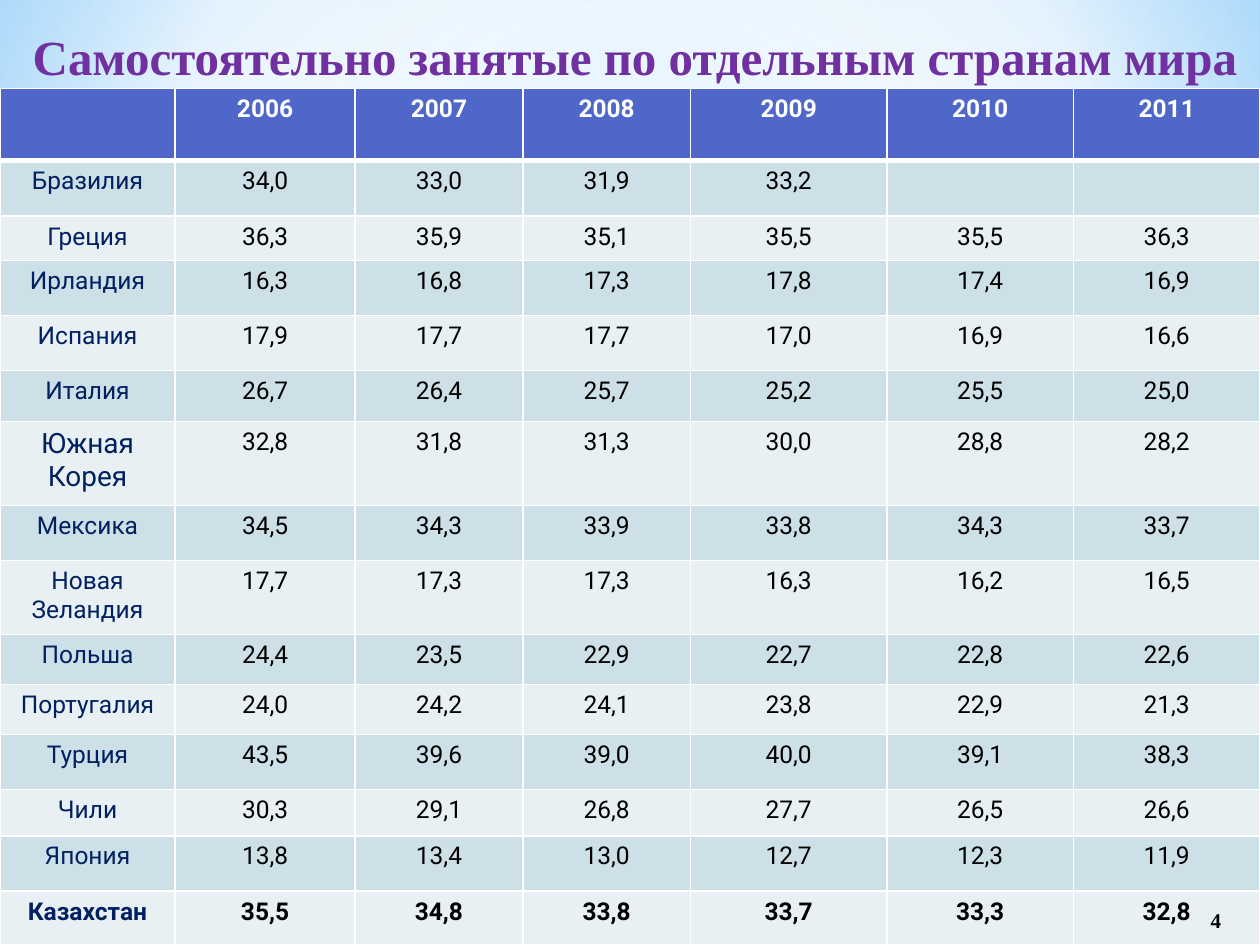
from lxml import etree
from pptx import Presentation
from pptx.dml import color
from pptx.enum import shapes, text
from pptx.oxml import ns
from pptx import util as u

YEARS = ["2006", "2007", "2008", "2009", "2010", "2011"]
COUNTRIES = {
    "Бразилия": "34,0 33,0 31,9 33,2",
    "Греция": "36,3 35,9 35,1 35,5 35,5 36,3",
    "Ирландия": "16,3 16,8 17,3 17,8 17,4 16,9",
    "Испания": "17,9 17,7 17,7 17,0 16,9 16,6",
    "Италия": "26,7 26,4 25,7 25,2 25,5 25,0",
    "Южная Корея": "32,8 31,8 31,3 30,0 28,8 28,2",
    "Мексика": "34,5 34,3 33,9 33,8 34,3 33,7",
    "Новая Зеландия": "17,7 17,3 17,3 16,3 16,2 16,5",
    "Польша": "24,4 23,5 22,9 22,7 22,8 22,6",
    "Португалия": "24,0 24,2 24,1 23,8 22,9 21,3",
    "Турция": "43,5 39,6 39,0 40,0 39,1 38,3",
    "Чили": "30,3 29,1 26,8 27,7 26,5 26,6",
    "Япония": "13,8 13,4 13,0 12,7 12,3 11,9",
    "Казахстан": "35,5 34,8 33,8 33,7 33,3 32,8",
}
COLUMN_WIDTHS = [3.53, 3.63, 3.38, 3.38, 3.96, 3.76, 3.76]
ROW_HEIGHTS = [1.45, 1.13, 0.89, 1.11, 1.11, 1.03, 1.69, 1.11,
               1.49, 1.01, 1.01, 1.11, 0.93, 1.11, 1.09]
HEADER_FILL, BAND_FILLS = "4E67C8", ["E8F0F4", "CDE0E8"]

HEADING = {"name": "Times New Roman", "size": u.Pt(28), "bold": True, "color": "7030A0"}
PAGE_NUMBER = {"name": "Times New Roman", "size": u.Pt(12), "bold": True, "color": "000000"}
YEAR = {"name": "Roboto", "size": u.Pt(14), "bold": True, "color": "FFFFFF"}
VALUE = {**YEAR, "bold": False, "color": "000000"}
COUNTRY = {**VALUE, "color": "002060"}


def rgb(value):
    """Turn a hex string into a colour."""
    return color.RGBColor.from_string(value)


def write(frame, words, style):
    """Put one centred, formatted run into a text frame."""
    paragraph = frame.paragraphs[0]
    paragraph.alignment = text.PP_ALIGN.CENTER
    run = paragraph.add_run()
    run.text = words
    for name, value in style.items():
        if name == "color":
            run.font.color.rgb = rgb(value)
        else:
            setattr(run.font, name, value)


def set_radial_fill(properties, stops, focus):
    """Replace a solid fill by a circular gradient of (position, colour, opacity)."""
    gradient = etree.Element(ns.qn("a:gradFill"), rotWithShape="1")
    stop_list = etree.SubElement(gradient, ns.qn("a:gsLst"))
    for position, value, opacity in stops:
        stop = etree.SubElement(stop_list, ns.qn("a:gs"), pos=str(position * 1000))
        tint = etree.SubElement(stop, ns.qn("a:srgbClr"), val=value)
        if opacity < 100:
            etree.SubElement(tint, ns.qn("a:alpha"), val=str(opacity * 1000))
    circle = etree.SubElement(gradient, ns.qn("a:path"), path="circle")
    etree.SubElement(circle, ns.qn("a:fillToRect"),
                     {side: str(share * 1000) for side, share in zip("ltrb", focus)})
    solid = properties.find(ns.qn("a:solidFill"))
    properties.replace(solid, gradient)


def add_sky(slide):
    """Give the slide its blue glow and the pale veil over it."""
    slide.background.fill.solid()
    set_radial_fill(slide._element.find(".//" + ns.qn("p:bgPr")),
                    [(0, "9ED5FF", 100), (60, "FFFFFF", 100), (100, "5BB9FF", 100)],
                    [20, 10, 20, 60])
    veil = slide.shapes.add_shape(shapes.MSO_SHAPE.RECTANGLE, 0, 0, u.Cm(25.4), u.Cm(14.17))
    veil.shadow.inherit = False
    veil.line.fill.background()
    veil.fill.solid()
    set_radial_fill(veil._element.spPr,
                    [(0, "FFFFFF", 89), (48, "FFFFFF", 62), (100, "B4DCFA", 79)],
                    [50, 50, 50, 50])
    slide.shapes._spTree.insert(2, veil._element)


def add_heading(slide, words):
    """Place the heading in the title placeholder."""
    heading = slide.shapes.title
    place = {"left": 0, "top": u.Cm(0.41), "width": u.Cm(25.4), "height": u.Cm(1.45)}
    for name, value in place.items():
        setattr(heading, name, value)
    layout = {"margin_left": u.Cm(0.45), "vertical_anchor": text.MSO_ANCHOR.TOP,
              "auto_size": text.MSO_AUTO_SIZE.NONE, "word_wrap": True}
    for name, value in layout.items():
        setattr(heading.text_frame, name, value)
    write(heading.text_frame, words, HEADING)


def set_borders(cell, widths):
    """Draw white borders of the given widths in points."""
    properties = cell._tc.get_or_add_tcPr()
    for index, (side, width) in enumerate(widths.items()):
        border = etree.Element(ns.qn("a:ln" + side), w=str(u.Pt(width)))
        fill = etree.SubElement(border, ns.qn("a:solidFill"))
        etree.SubElement(fill, ns.qn("a:srgbClr"), val="FFFFFF")
        properties.insert(index, border)


def cell_style(row, column, country):
    """Choose the text format for a table cell."""
    if row == 0:
        return YEAR
    style = dict(VALUE if column else COUNTRY)
    style["bold"] = country == "Казахстан"
    if column == 0 and country == "Южная Корея":
        style["size"] = u.Pt(16)
    return style


def add_share_table(slide):
    """Add the table of self-employed shares by country and year."""
    rows = [["", *YEARS]] + [[name, *shares.split()] for name, shares in COUNTRIES.items()]
    table = slide.shapes.add_table(len(rows), len(COLUMN_WIDTHS), 0, u.Cm(1.78),
                                   u.Cm(25.4), u.Cm(17.27)).table
    for column, width in zip(table.columns, COLUMN_WIDTHS):
        column.width = u.Cm(width)
    for r, (entries, height) in enumerate(zip(rows, ROW_HEIGHTS)):
        table.rows[r].height = u.Cm(height)
        for c, cell in enumerate(table.rows[r].cells):
            cell.fill.solid()
            cell.fill.fore_color.rgb = rgb(BAND_FILLS[r % 2] if r else HEADER_FILL)
            set_borders(cell, {"L": 1, "R": 1, "T": 3 if r == 1 else 1, "B": 1 if r else 3})
            if c < len(entries) and entries[c]:
                write(cell.text_frame, entries[c], cell_style(r, c, entries[0]))


def add_page_number(slide, number):
    """Add the page number in the bottom right corner."""
    corner = slide.shapes.add_textbox(u.Cm(23.62), u.Cm(18.03), u.Cm(1.78), u.Cm(1.02))
    corner.text_frame.word_wrap = True
    corner.text_frame.vertical_anchor = text.MSO_ANCHOR.MIDDLE
    write(corner.text_frame, number, PAGE_NUMBER)


def main():
    """Build and save the slide."""
    deck = Presentation()
    deck.slide_width, deck.slide_height = u.Cm(25.4), u.Cm(19.05)
    slide = deck.slides.add_slide(deck.slide_layouts[5])
    add_sky(slide)
    add_share_table(slide)
    add_heading(slide, "Самостоятельно занятые по отдельным странам мира")
    add_page_number(slide, "4")
    deck.save("out.pptx")


if __name__ == "__main__":
    main()
